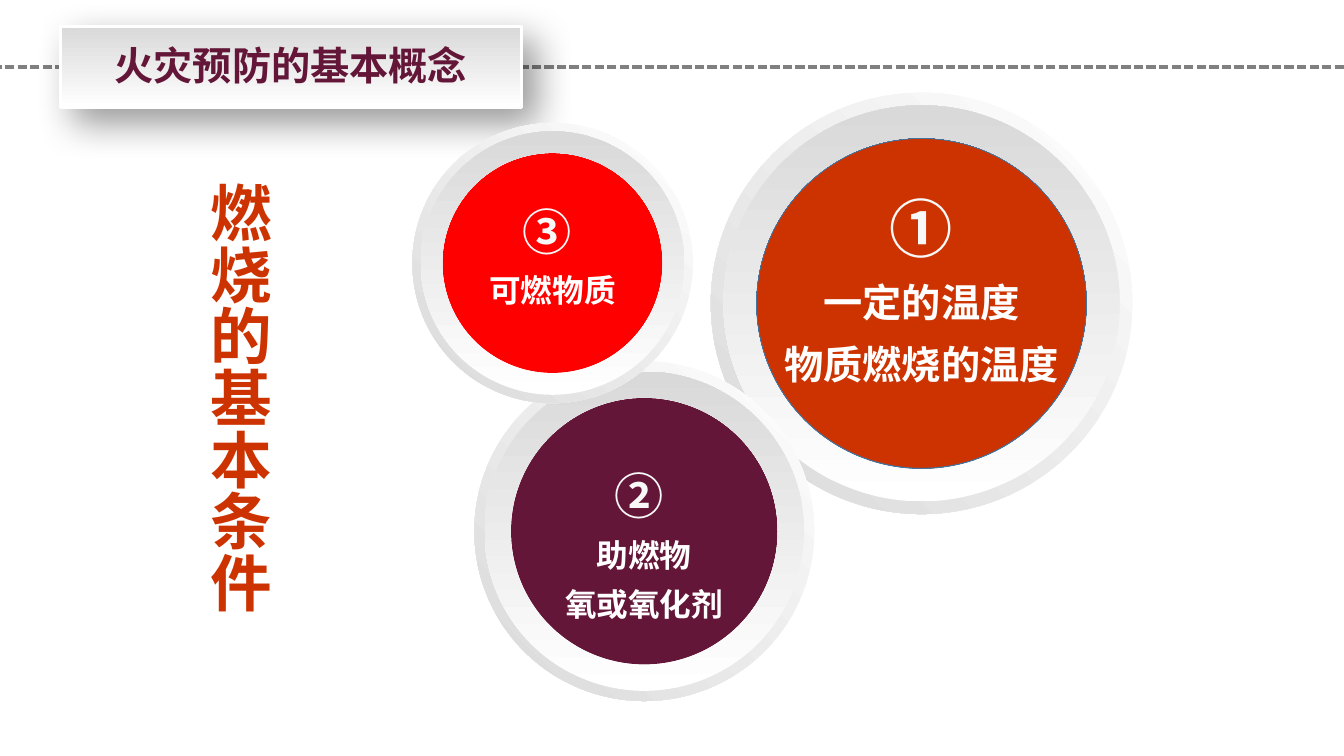
import lxml.etree
import pptx
import pptx.dml.color
import pptx.enum.dml
import pptx.enum.shapes
import pptx.enum.text
import pptx.oxml
import pptx.oxml.ns
import pptx.util

Inches = pptx.util.Inches
Pt = pptx.util.Pt
RGBColor = pptx.dml.color.RGBColor
SHAPE = pptx.enum.shapes.MSO_SHAPE
ANCHOR = pptx.enum.text.MSO_ANCHOR
ALIGN = pptx.enum.text.PP_ALIGN
AUTO = pptx.enum.text.MSO_AUTO_SIZE
qn = pptx.oxml.ns.qn

FONT = "Noto Sans CJK SC"
WHITE = RGBColor(0xFF, 0xFF, 0xFF)
NUMBER = RGBColor(0xF8, 0xF8, 0xF8)
SILVER = RGBColor(0xD9, 0xD9, 0xD9)
GRAY = RGBColor(0x80, 0x80, 0x80)
PLUM = RGBColor(0x64, 0x16, 0x38)
ORANGE = RGBColor(0xCC, 0x33, 0x00)
RED = RGBColor(0xFF, 0x00, 0x00)
BLUE = RGBColor(0x43, 0x73, 0x9E)

SHADOW = (
    '<a:effectLst xmlns:a="http://schemas.openxmlformats.org/drawingml/2006/main">'
    '<a:outerShdw blurRad="342900" dist="177800" dir="2700000" algn="tl" rotWithShape="0">'
    '<a:srgbClr val="000000"><a:alpha val="40000"/></a:srgbClr>'
    "</a:outerShdw></a:effectLst>"
)


def write(p, text, size, color, align=ALIGN.CENTER, spacing=None):
    """Write one bold run into a paragraph."""
    p.alignment = align
    p.line_spacing = spacing
    r = p.add_run()
    r.text = text
    r.font.size = Pt(size)
    r.font.bold = True
    r.font.color.rgb = color
    r.font.name = FONT
    ea = lxml.etree.SubElement(r.font._element, qn("a:ea"))
    ea.set("typeface", FONT)


def add_text_box(s, left, top, width, height, wrap=True):
    """Add a text box that grows with its text."""
    sp = s.shapes.add_textbox(Inches(left), Inches(top), Inches(width), Inches(height))
    sp.text_frame.word_wrap = wrap
    sp.text_frame.auto_size = AUTO.SHAPE_TO_FIT_TEXT
    return sp.text_frame


def fill_gradient(sp, first, last, angle):
    """Fill a shape with a two-colour linear gradient."""
    sp.fill.gradient()
    sp.fill.gradient_angle = angle
    for stop, color in zip(sp.fill.gradient_stops, (first, last)):
        stop.color.rgb = color


def add_centred(shapes, kind, cx, cy, size):
    """Add a plain round shape about a centre point."""
    sp = shapes.add_shape(kind, Inches(cx - size / 2), Inches(cy - size / 2),
                          Inches(size), Inches(size))
    sp.shadow.inherit = False
    sp.line.fill.background()
    return sp


def add_header(s, left, top, width, height, text):
    """Draw the dashed rule, the raised banner and the slide title."""
    y = Inches(top + height / 2)
    rule = s.shapes.add_connector(pptx.enum.shapes.MSO_CONNECTOR.STRAIGHT,
                                  Inches(13.33), y, 0, y)
    rule.line.color.rgb = GRAY
    rule.line.width = Pt(2.25)
    rule.line.dash_style = pptx.enum.dml.MSO_LINE.SQUARE_DOT
    lxml.etree.SubElement(rule.element.spPr, qn("a:effectLst"))

    banner = s.shapes.add_shape(SHAPE.RECTANGLE, Inches(left), Inches(top),
                                Inches(width), Inches(height))
    fill_gradient(banner, SILVER, WHITE, 270)
    banner.line.color.rgb = WHITE
    banner.line.width = Pt(2.25)
    banner.element.spPr.append(pptx.oxml.parse_xml(SHADOW))

    title = s.shapes.title
    title.left, title.top = Inches(left + 0.16), Inches(top + 0.1)
    title.width, title.height = Inches(width - 0.32), Inches(height - 0.18)
    tf = title.text_frame
    tf.word_wrap = True
    tf.vertical_anchor = ANCHOR.MIDDLE
    write(tf.paragraphs[0], text, 28, PLUM, spacing=0.9)
    banner.element.addnext(title.element)


def add_condition(s, cx, cy, size, color, text_top, number, number_size, lines,
                  line_size, outline=None):
    """Draw one ringed disc with its number and wording."""
    disc = add_centred(s.shapes, SHAPE.OVAL, cx, cy, size * 0.784)
    disc.fill.solid()
    disc.fill.fore_color.rgb = color
    if outline is not None:
        disc.line.color.rgb = outline
        disc.line.width = Pt(1)
    for scale, thickness, angle in ((1, 0.101, 225), (0.94, 0.081, 90)):
        ring = add_centred(s.shapes, SHAPE.DONUT, cx, cy, size * scale)
        ring.adjustments[0] = thickness
        fill_gradient(ring, WHITE, SILVER, angle)

    width = size * 1.046
    height = (number_size + len(lines) * line_size) * 0.026
    tf = add_text_box(s, cx - width / 2, cy - size / 2 + text_top, width, height)
    write(tf.paragraphs[0], number, number_size, NUMBER, spacing=1.3)
    for line in lines:
        write(tf.add_paragraph(), line, line_size, WHITE, spacing=1.3)


def add_side_heading(s, left, top, width, height, text):
    """Write the vertical heading."""
    tf = add_text_box(s, left, top, width, height, wrap=False)
    tf._txBody.bodyPr.set("vert", "eaVert")
    write(tf.paragraphs[0], text, 44, ORANGE, align=ALIGN.LEFT)


def main():
    """Build and save the slide."""
    prs = pptx.Presentation()
    prs.slide_width, prs.slide_height = Inches(13.33), Inches(7.5)
    s = prs.slides.add_slide(prs.slide_layouts[5])
    add_header(s, 0.6, 0.26, 4.57, 0.81, "火灾预防的基本概念")
    add_condition(s, 9.14, 3.01, 4.18, ORANGE, 0.68, "①", 45.1,
                  ["一定的温度", "物质燃烧的温度"], 28, outline=BLUE)
    add_condition(s, 6.39, 5.27, 3.37, PLUM, 0.81, "② ", 35.1,
                  ["助燃物", "氧或氧化剂"], 22.6)
    add_condition(s, 5.48, 2.61, 2.78, RED, 0.55, "③ ", 35.1, ["可燃物质"], 22.6)
    add_side_heading(s, 1.85, 1.71, 0.94, 4.42, "燃烧的基本条件")
    prs.save("out.pptx")


if __name__ == "__main__":
    main()
